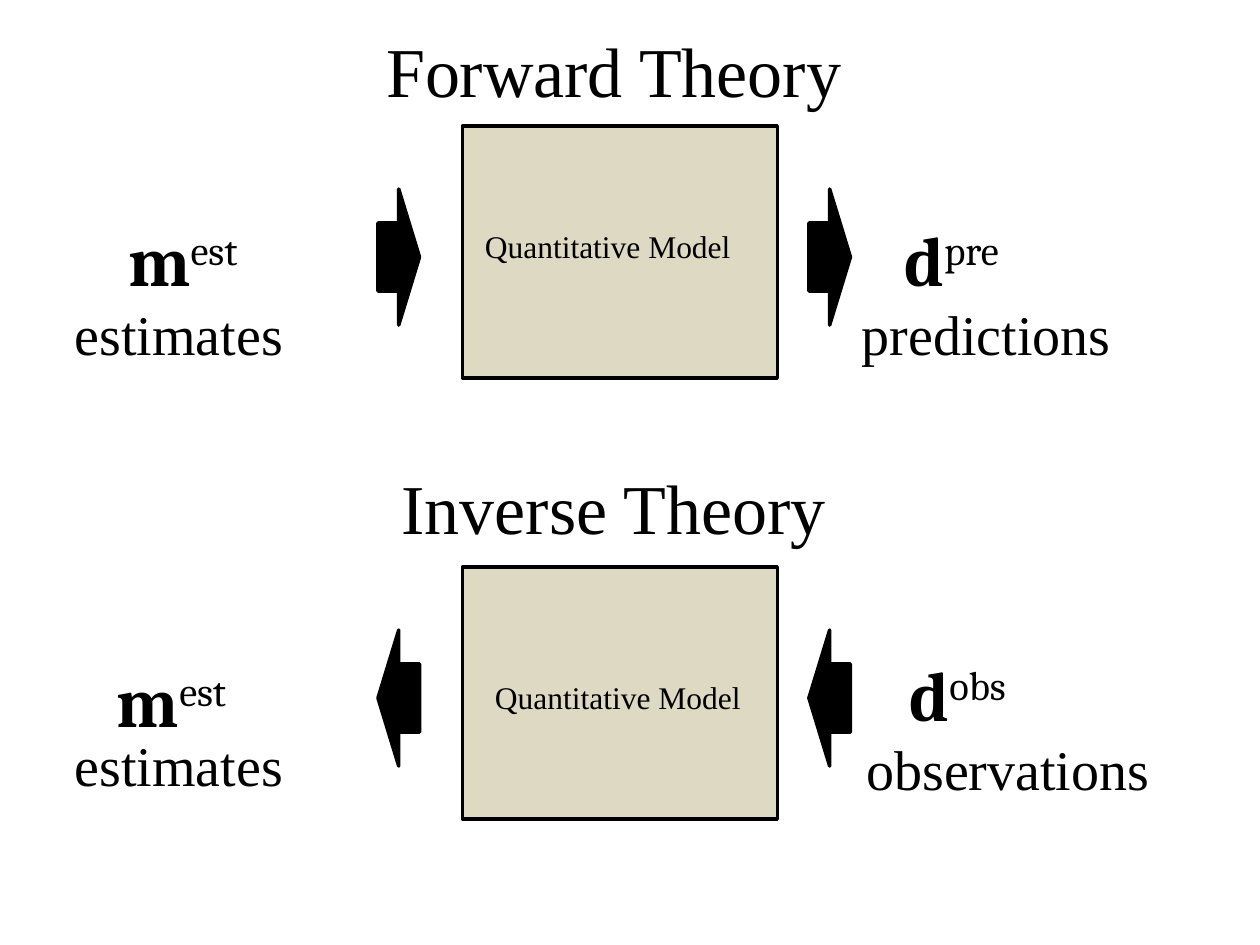
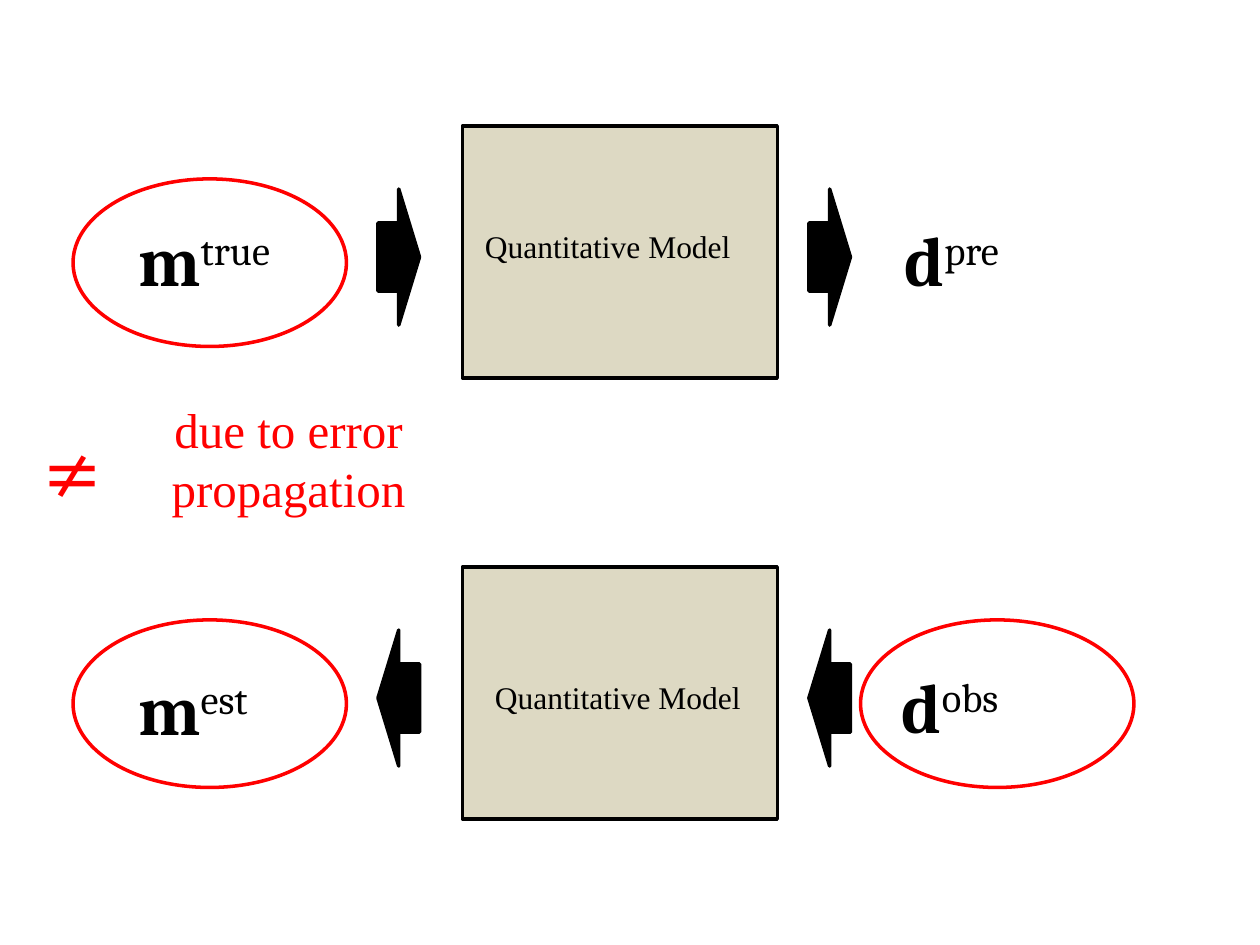
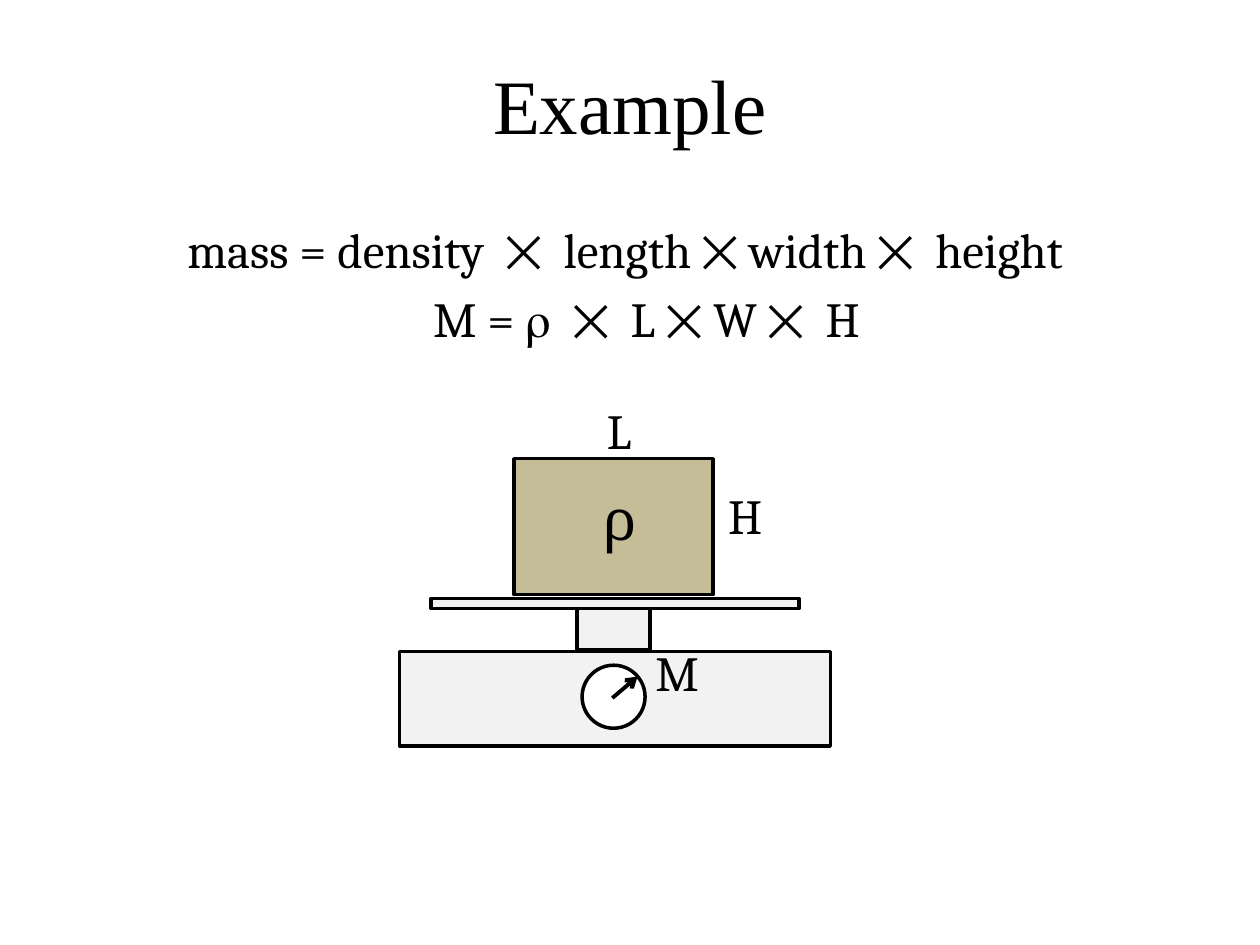
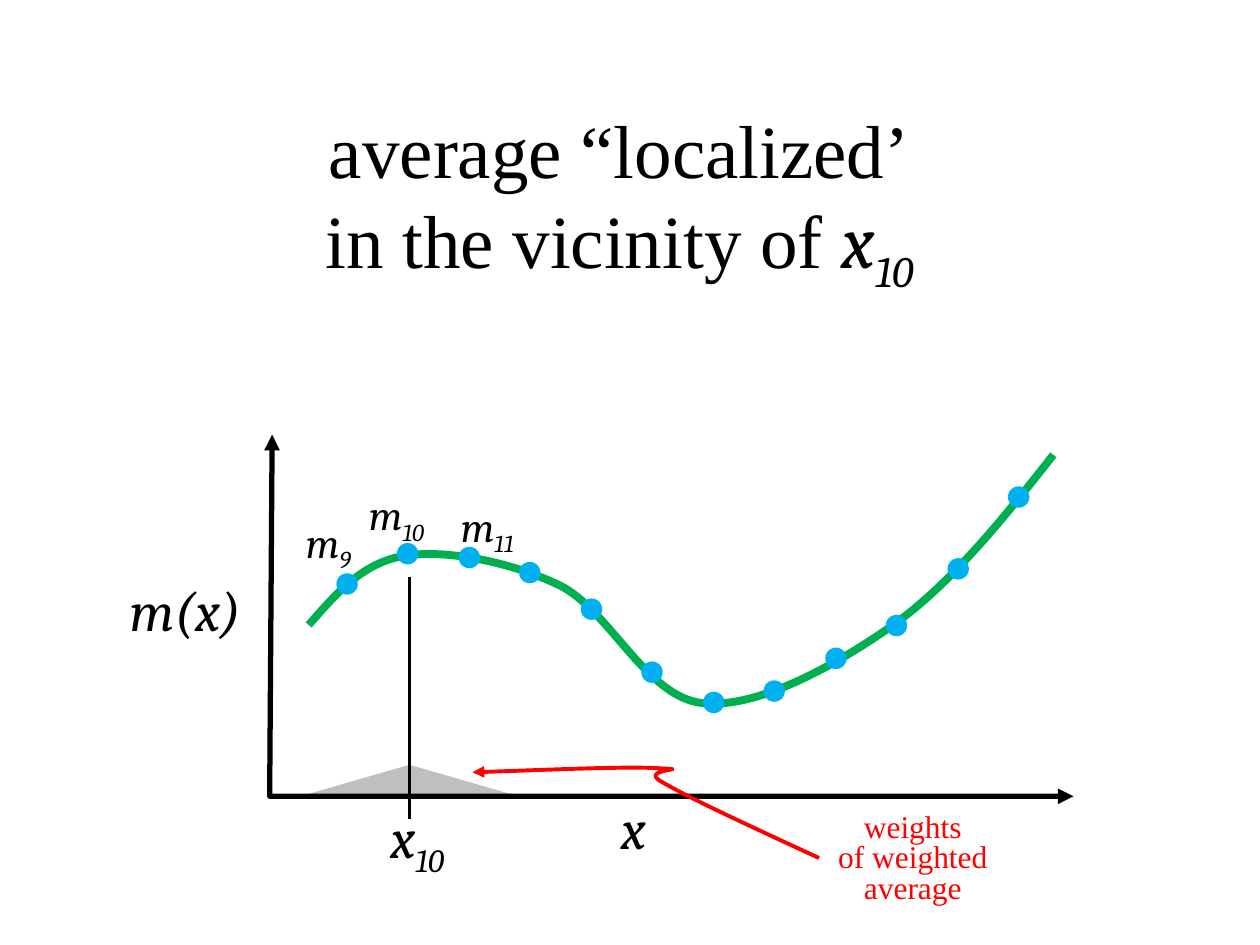
from lxml import etree
from pptx import Presentation
from pptx.dml.color import RGBColor
from pptx.enum.shapes import MSO_CONNECTOR, MSO_SHAPE
from pptx.enum.text import MSO_ANCHOR, MSO_AUTO_SIZE, PP_ALIGN
from pptx.oxml.ns import qn
from pptx.util import Pt

PX = 9144  # EMU in one px, 100 px to the inch
WIDTH, HEIGHT = 1000, 750

BLACK = RGBColor(0x00, 0x00, 0x00)
WHITE = RGBColor(0xFF, 0xFF, 0xFF)
RED = RGBColor(0xFF, 0x00, 0x00)
GREEN = RGBColor(0x00, 0xB0, 0x50)
BLUE = RGBColor(0x00, 0xB0, 0xF0)
SAND = RGBColor(0xDD, 0xD9, 0xC3)
CLAY = RGBColor(0xC4, 0xBD, 0x97)
PALE = RGBColor(0xF2, 0xF2, 0xF2)
GREY = RGBColor(0xBF, 0xBF, 0xBF)

TIMES, CAMBRIA = "Times New Roman", "Cambria"
SUPER, SUB = 30, -25

RECT, OVAL = MSO_SHAPE.RECTANGLE, MSO_SHAPE.OVAL
WEDGE = MSO_SHAPE.ISOSCELES_TRIANGLE
RIGHT, LEFT = MSO_SHAPE.RIGHT_ARROW, MSO_SHAPE.LEFT_ARROW
STRAIGHT = MSO_CONNECTOR.STRAIGHT
TOP, MIDDLE = MSO_ANCHOR.TOP, MSO_ANCHOR.MIDDLE
START, CENTER = PP_ALIGN.LEFT, PP_ALIGN.CENTER
NO_FIT = MSO_AUTO_SIZE.NONE


def emu(*lengths):
    return [n * PX for n in lengths]


def write(frame, paras, size=32, font=TIMES, color=BLACK, align=START,
          anchor=TOP, gap=None):
    """Fill a frame; a paragraph is a string or a list of (text, changes)."""
    frame.word_wrap = True
    frame.auto_size = NO_FIT
    frame.vertical_anchor = anchor
    for i, para in enumerate(paras):
        p = frame.add_paragraph() if i else frame.paragraphs[0]
        p.alignment = align
        if gap:
            p.line_spacing = gap
        for words, change in [(para, {})] if isinstance(para, str) else para:
            for j, line in enumerate(words.split("\n")):
                if j:
                    p.add_line_break()
                run = p.add_run()
                run.text = line
                run.font.size = Pt(size)
                run.font.name = change.get("font", font)
                run.font.color.rgb = color
                run.font.bold = change.get("bold", False)
                run.font.italic = change.get("italic", False)
                if "base" in change:
                    run.font._element.set("baseline", str(change["base"] * 1000))


def text(slide, box, *paras, **form):
    write(slide.shapes.add_textbox(*emu(*box)).text_frame, paras, **form)


def title(slide, box, para, size):
    holder = slide.shapes.title
    holder.left, holder.top, holder.width, holder.height = emu(*box)
    write(holder.text_frame, [para], size=size, align=CENTER, anchor=MIDDLE)


def shape(shapes, kind, box, fill=None, line=BLACK):
    item = shapes.add_shape(kind, *emu(*box))
    paint(item, fill, line, 2)


def paint(item, fill, line, width):
    item.shadow.inherit = False
    if fill is None:
        item.fill.background()
    else:
        item.fill.solid()
        item.fill.fore_color.rgb = fill
    if line is None:
        item.line.fill.background()
    else:
        item.line.color.rgb = line
        item.line.width = Pt(width)


def tip(item, end, kind):
    """Put an arrowhead on the 'head' (start) or 'tail' (finish) of a line."""
    etree.SubElement(item.line._get_or_add_ln(), qn(f"a:{end}End"), type=kind)


def link(slide, x1, y1, x2, y2):
    item = slide.shapes.add_connector(STRAIGHT, *emu(x1, y1, x2, y2))
    item.line.color.rgb = BLACK
    item.line.width = Pt(2.25)
    etree.SubElement(item._element.spPr, qn("a:effectLst"))
    return item


def trace(slide, x, y, points, color, width, curved=False):
    """Draw an open line; when curved, each three points are one Bézier."""
    points = [(x + dx, y + dy) for dx, dy in points]
    pen = slide.shapes.build_freeform(*points[0], scale=PX)
    pen.add_line_segments(points[1:], close=False)
    item = pen.convert_to_shape()
    paint(item, None, color, width)
    if curved:
        steps = item._element.xpath(".//a:lnTo")
        for i in range(0, len(steps), 3):
            bend = etree.Element(qn("a:cubicBezTo"))
            steps[i].addprevious(bend)
            for step in steps[i:i + 3]:
                bend.append(step[0])
                step.getparent().remove(step)
    return item


def symbol(slide, x, y, name, mark):
    text(slide, (x, y, 208, 77),
         [(name, {"bold": True}), (mark, {"base": SUPER})],
         size=40, font=CAMBRIA)


def model(slide, x, y, arrow, inset):
    """Draw the model box between its two arrows."""
    shape(slide.shapes, RECT, (x + 67, y, 250, 200), SAND)
    text(slide, (x + 67 + inset, y + 67 + inset, 225, 42),
         "Quantitative Model", size=18)
    for dx in (0, 342):
        shape(slide.shapes, arrow, (x + dx, y + 50, 33, 108), BLACK)


def models(slide):
    model(slide, 300, 100, RIGHT, 8)
    model(slide, 300, 450, LEFT, 16)


def theory(slide):
    models(slide)
    for x, y, name, mark in ((92, 167, "m", "est"), (708, 167, "d", "pre"),
                             (83, 517, "m", "est"), (712, 512, "d", "obs")):
        symbol(slide, x, y, name, mark)
    for y, words in ((17, "Forward Theory"), (364, "Inverse Theory")):
        text(slide, (208, y, 558, 77), words, size=40, align=CENTER)
    for x, y, words in ((17, 233, "estimates"), (658, 233, "predictions"),
                        (675, 578, "observations"), (17, 575, "estimates")):
        text(slide, (x, y, 250, 64), words, align=CENTER)


def errors(slide):
    models(slide)
    for x, y, name, mark in ((100, 167, "m", "true"), (708, 167, "d", "pre"),
                             (100, 523, "m", "est"), (706, 522, "d", "obs")):
        symbol(slide, x, y, name, mark)
    for x, y in ((683, 492), (58, 142), (58, 492)):
        shape(slide.shapes, OVAL, (x, y, 217, 133), line=RED)
    text(slide, (25, 314, 125, 111), "≠", size=60, font=CAMBRIA, color=RED)
    text(slide, (100, 312, 258, 104), "due to error propagation",
         size=28, color=RED, align=CENTER)


def scale(slide, x, y):
    """Draw the weighing scale with the block on its plate."""
    parts = slide.shapes.add_group_shape().shapes
    for kind, (dx, dy, w, h), fill in (
            (RECT, (0, 153, 342, 75), PALE), (RECT, (141, 119, 58, 33), PALE),
            (RECT, (25, 111, 292, 8), PALE), (OVAL, (145, 164, 50, 50), WHITE)):
        shape(parts, kind, (x + dx, y + dy, w, h), fill)
    tip(link(slide, x + 169, y + 190, x + 189, y + 173), "tail", "arrow")
    shape(slide.shapes, RECT, (x + 91, y, 158, 108), CLAY)
    for dx, dy, name in ((187, 128, "M"), (241, 3, "H"), (141, -64, "L")):
        text(slide, (x + dx, y + dy, 67, 83), name,
             size=28, font=CAMBRIA, align=CENTER, anchor=MIDDLE)
    text(slide, (x + 151, y + 16, 60, 64), "ρ", font=CAMBRIA)


def example(slide):
    title(slide, (50, 20, 900, 125), "Example", 44)
    for x, y, words in (
            (25, 156, "mass = density  ⨉  length ⨉ width ⨉  height"),
            (42, 211, "M = ρ  ⨉  L ⨉ W ⨉  H")):
        text(slide, (x, y, 942, 83), words,
             size=28, font=CAMBRIA, align=CENTER, anchor=MIDDLE)
    scale(slide, 317, 364)


def plot(slide, x, y):
    """Draw the curve, its samples and the weights on a pair of axes."""
    shape(slide.shapes, WEDGE, (x + 21, y + 262, 180, 26), GREY, None)
    axes = trace(slide, x, y, [(2, 0), (0, 287), (638, 287)], BLACK, 3)
    for end in ("head", "tail"):
        tip(axes, end, "triangle")
    trace(slide, x, y, [
        (31, 151), (53, 126), (74, 101), (108, 96), (141, 91), (192, 101),
        (231, 120), (270, 140), (299, 208), (343, 213), (386, 218),
        (448, 184), (495, 151), (541, 118), (582, 67), (622, 16),
    ], GREEN, 4.5, curved=True)
    tops = (110, 86, 89, 101, 130, 180, 204, 195, 169, 143, 98, 41)
    for i, top in enumerate(tops):
        shape(slide.shapes, OVAL, (x + 53 + 97 * i // 2, y + top, 17, 17),
              BLUE, None)
    for dx, dy, name, mark, size in (
            (-121, 107, "m(x)", "", 32), (269, 280, "x", "", 32),
            (69, 38, "m", "10", 24), (142, 47, "m", "11", 24),
            (19, 60, "m", "9", 24), (86, 287, "x", "10", 32)):
        runs = [(name, {"italic": True})]
        if mark:
            runs.append((mark, {"italic": True, "base": SUB}))
        text(slide, (x + dx, y + dy, 133, 90), runs, size=size, font=CAMBRIA)
    link(slide, x + 111, y + 113, x + 111, y + 305)
    hint = trace(slide, x, y, [
        (161, 268), (224, 266), (287, 263), (312, 265), (337, 266),
        (291, 265), (312, 276), (332, 288), (384, 312), (436, 336),
    ], RED, 2.25, curved=True)
    tip(hint, "head", "triangle")
    text(slide, (x + 427, y + 296, 167, 83), "weights", "of weighted average",
         size=18, color=RED, align=CENTER, anchor=MIDDLE, gap=0.8)


def average(slide):
    slant = {"font": CAMBRIA, "italic": True}
    title(slide, (0, 0, 983, 317),
          [("average “localized’\nin the vicinity of ", {}), ("x", slant),
           ("10", {**slant, "base": SUB})], 42.9)
    plot(slide, 214, 345)


def main():
    deck = Presentation()
    deck.slide_width, deck.slide_height = emu(WIDTH, HEIGHT)
    titled, blank = deck.slide_layouts[5], deck.slide_layouts[6]
    for build, layout in ((theory, blank), (errors, blank),
                          (example, titled), (average, titled)):
        build(deck.slides.add_slide(layout))
    deck.save("out.pptx")


if __name__ == "__main__":
    main()
